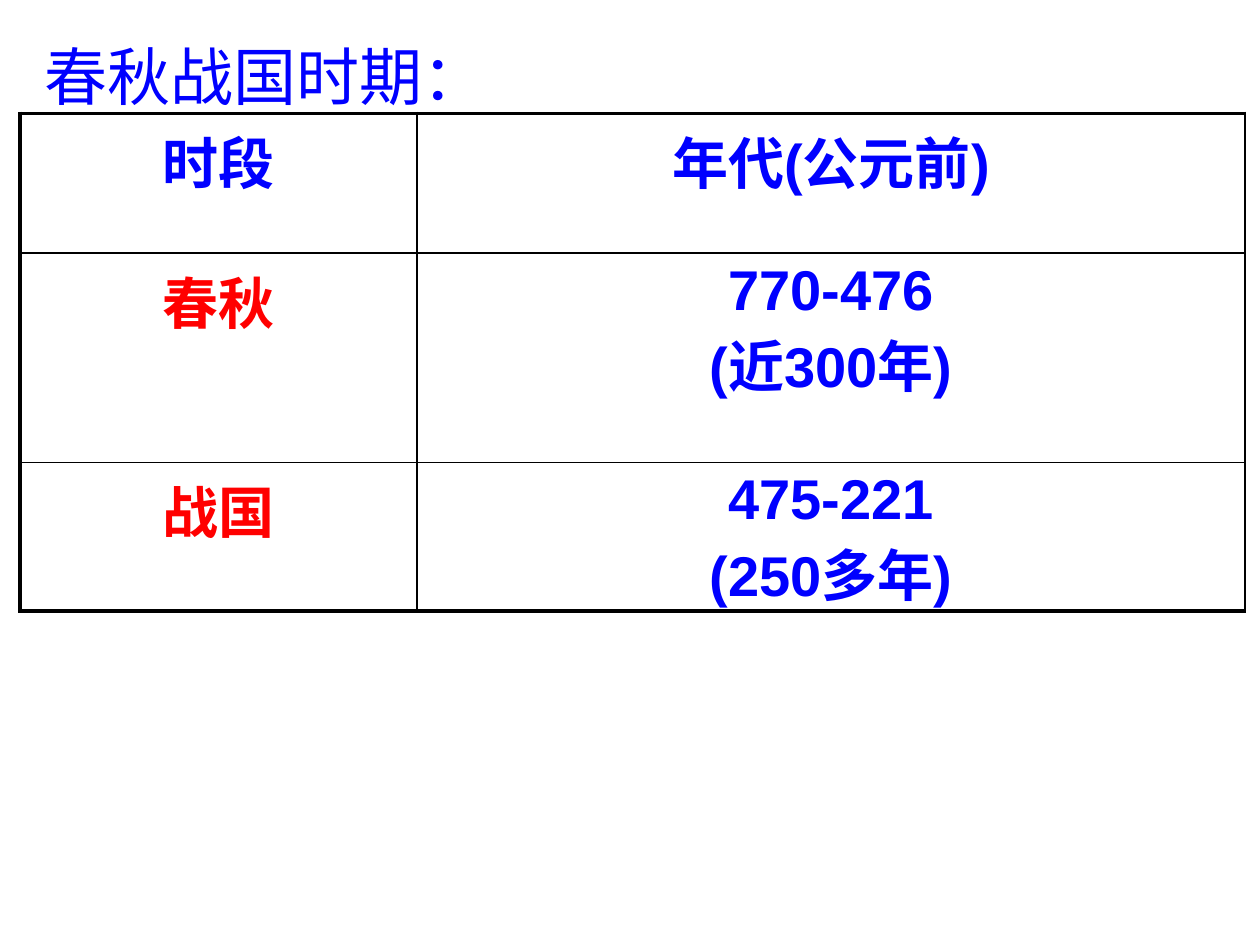
from lxml.etree import SubElement
from pptx import Presentation
from pptx.dml.color import RGBColor
from pptx.enum.text import MSO_ANCHOR, MSO_AUTO_SIZE, PP_ALIGN
from pptx.oxml.ns import qn
from pptx.util import Inches, Pt

COLORS = {"line": "000000", "blue": "0000FF", "red": "FF0000"}
PERIODS = [
    ("时段", "年代(公元前)"),
    ("春秋", "770-476\n(近300年)"),
    ("战国", "475-221\n(250多年)"),
]
COLS = [3.15, 6.57]
ROWS = [1.11, 1.66, 1.18]
THIN, THICK = 1, 2.25


def format_text(tf, size, color, bold, align):
    for p in tf.paragraphs:
        p.alignment = align
        for r in p.runs:
            r.font.name = "Arial"
            r.font.size = Pt(size)
            r.font.bold = bold
            r.font.color.rgb = RGBColor.from_string(COLORS[color])


def set_borders(cell, widths):
    tcPr = cell._tc.get_or_add_tcPr()
    for side, width in widths.items():
        ln = SubElement(tcPr, qn(f"a:ln{side}"), w=str(Pt(width)))
        fill = SubElement(ln, qn("a:solidFill"))
        SubElement(fill, qn("a:srgbClr"), val=COLORS["line"])


def add_heading(s, left, top, width, height):
    title = s.shapes.title
    title.left, title.top = Inches(left), Inches(top)
    title.width, title.height = Inches(width), Inches(height)
    tf = title.text_frame
    tf.text = "春秋战国时期："
    tf.word_wrap = False
    tf.auto_size = MSO_AUTO_SIZE.SHAPE_TO_FIT_TEXT
    tf.vertical_anchor = MSO_ANCHOR.TOP
    format_text(tf, 36, "blue", False, PP_ALIGN.LEFT)


def add_period_table(s, left, top):
    frame = s.shapes.add_table(len(ROWS), len(COLS), Inches(left), Inches(top),
                               Inches(sum(COLS)), Inches(sum(ROWS)))
    table = frame.table
    table.first_row = table.horz_banding = False
    for col, width in zip(table.columns, COLS):
        col.width = Inches(width)
    for row, height in zip(table.rows, ROWS):
        row.height = Inches(height)
    for i, texts in enumerate(PERIODS):
        for j, text in enumerate(texts):
            cell = table.cell(i, j)
            cell.text_frame.text = text
            color = "red" if i > 0 and j == 0 else "blue"
            format_text(cell.text_frame, 32, color, True, PP_ALIGN.CENTER)
            set_borders(cell, {
                "L": THICK if j == 0 else THIN,
                "R": THIN,
                "T": THICK if i == 0 else THIN,
                "B": THICK if i == len(ROWS) - 1 else THIN,
            })
            cell.fill.background()


def main():
    prs = Presentation()
    prs.slide_width, prs.slide_height = Inches(10), Inches(7.5)
    s = prs.slides.add_slide(prs.slide_layouts[5])
    add_heading(s, 0.25, 0.25, 3.71, 0.7)
    add_period_table(s, 0.16, 0.9)
    prs.save("out.pptx")


if __name__ == "__main__":
    main()
